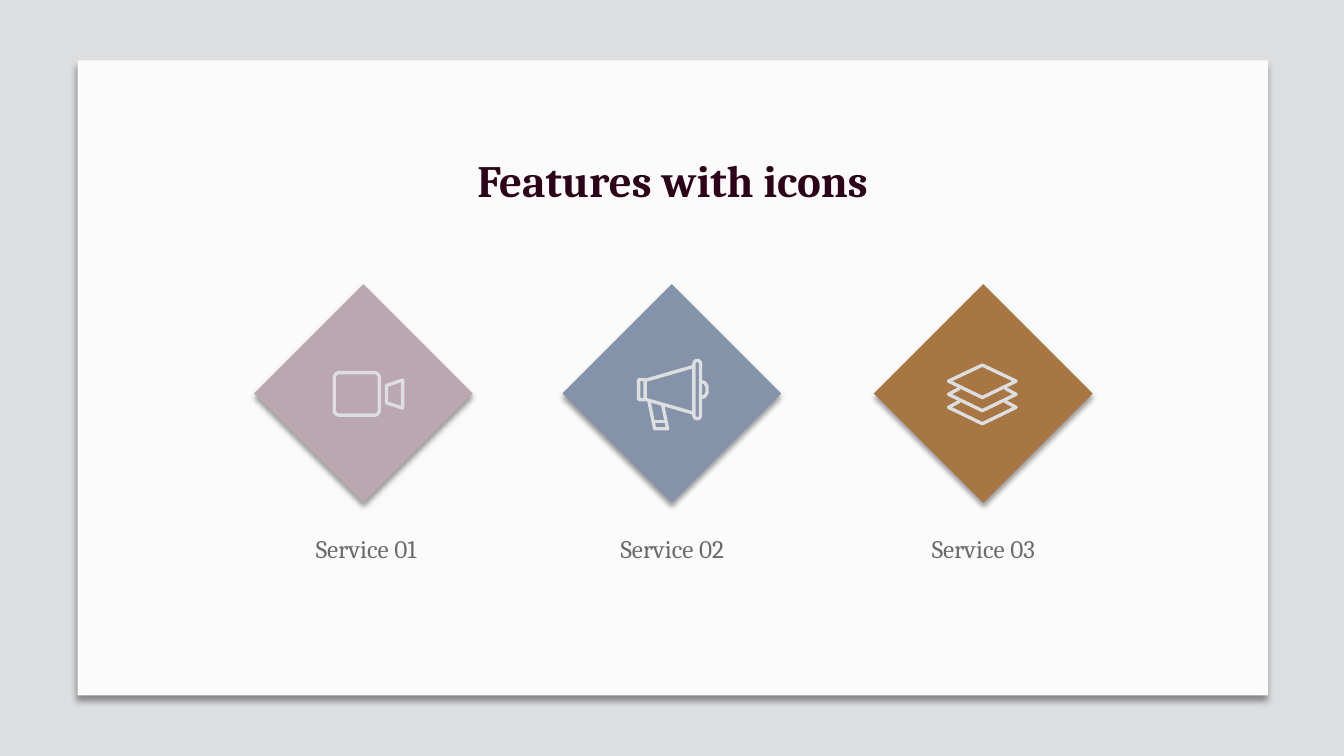
"""Build a slide with three diamond icons, each with a service name."""
import math
import pptx
import pptx.util
import pptx.dml.color
import pptx.enum.shapes
import pptx.enum.text
import pptx.oxml
import pptx.oxml.ns

Pt = pptx.util.Pt
KIND = pptx.enum.shapes.MSO_SHAPE
TEXT = pptx.enum.text

THEME = {
    "font": "Cambria", "back": "DDDEE0", "panel": "FBFBFB",
    "head": "2D0319", "label": "6A6A6A", "icon": "DDDEE0",
    "head_size": 32, "label_size": 18, "stroke": 2.4,
}
TITLE = "Features with icons"


def bend(left, top, right, bottom, rad):
    """Return the points of a box with round corners."""
    spots = [(right - rad, bottom - rad, 0), (left + rad, bottom - rad, 90),
             (left + rad, top + rad, 180), (right - rad, top + rad, 270)]
    return [(x + rad * math.cos(math.radians(turn + step)),
             y + rad * math.sin(math.radians(turn + step)))
            for x, y, turn in spots for step in range(0, 91, 15)]


def sheet(drop):
    """Return the visible edge of a lower layer."""
    edge = [(9.4, 18.2), (1.4, 22.5), (25.6, 34.2), (49.7, 22.5), (41.8, 18.2)]
    return [(x, y + drop) for x, y in edge]


CAMERA = [
    (bend(1.2, 1.2, 33.4, 31.6, 3.6), True),
    ([(38.5, 10.4), (50, 6.5), (50, 26.6), (38.5, 22.7)], True),
]
HORN = [
    (bend(40.7, 1.2, 45.4, 42.8, 2.3), True),
    (bend(1.2, 14.8, 5.8, 29.2, 1), True),
    ([(5.8, 15.5), (40.7, 5.4)], False),
    ([(5.8, 28.9), (40.7, 38.9)], False),
    ([(45.4, 16.2), (48.3, 17), (50, 19.5), (50, 24.4), (48.3, 27),
      (45.4, 27.7)], False),
    ([(8.6, 30.2), (12.6, 50), (21.9, 50), (18.4, 33.1)], False),
    ([(11.9, 45), (20.6, 45)], False),
]
LAYERS = [
    ([(1.4, 13.1), (25.6, 1.6), (49.7, 13.1), (25.6, 24.8)], True),
    (sheet(0), False),
    (sheet(9.3), False),
]
ITEMS = [
    ("Service 01", "BAA7B0", 259.6, 261.6, (237.6, 265), CAMERA),
    ("Service 02", "8593AA", 479.9, 480.2, (455, 256.3), HORN),
    ("Service 03", "A77643", 702.4, 702.4, (676.1, 259.2), LAYERS),
]
SIDE, TOP = 156.2, 203
WIDE, HIGH, LABEL_Y = 97.2, 29, 377.2


def tint(name):
    """Return a colour from its hex code."""
    return pptx.dml.color.RGBColor.from_string(name)


def write(shape, text, size, color, bold=False, space=None, wrap=False):
    """Put centred text in a shape."""
    frame = shape.text_frame
    frame.word_wrap = wrap
    frame.auto_size = TEXT.MSO_AUTO_SIZE.NONE
    frame.vertical_anchor = TEXT.MSO_ANCHOR.TOP
    frame.text = text
    line = frame.paragraphs[0]
    line.alignment = TEXT.PP_ALIGN.CENTER
    if space:
        line.line_spacing = Pt(space)
    font = line.runs[0].font
    font.name, font.size, font.bold = THEME["font"], Pt(size), bold
    font.color.rgb = tint(color)


def block(slide, kind, box, color, drop):
    """Add a filled shape with a soft shadow below it."""
    shape = slide.shapes.add_shape(kind, *map(Pt, box))
    shape.fill.solid()
    shape.fill.fore_color.rgb = tint(color)
    shape.line.fill.background()
    shape.shadow.inherit = False
    glow = pptx.oxml.parse_xml(
        f'<a:outerShdw {pptx.oxml.ns.nsdecls("a")} blurRad="{Pt(4)}" '
        f'dist="{Pt(drop)}" dir="5400000" algn="t" rotWithShape="0">'
        '<a:srgbClr val="000000"><a:alpha val="40000"/></a:srgbClr>'
        '</a:outerShdw>')
    shape._element.spPr.find(pptx.oxml.ns.qn("a:effectLst")).append(glow)


def draw(slide, spot, strokes):
    """Add one icon made of outlines."""
    pen = None
    for points, closed in strokes:
        path = [(Pt(spot[0] + x), Pt(spot[1] + y)) for x, y in points]
        if pen is None:
            pen = slide.shapes.build_freeform(*path[0], scale=1.0)
        else:
            pen.move_to(*path[0])
        pen.add_line_segments(path[1:], close=closed)
    icon = pen.convert_to_shape()
    icon.fill.background()
    icon.line.color.rgb = tint(THEME["icon"])
    icon.line.width = Pt(THEME["stroke"])
    icon.line._get_or_add_ln().append(pptx.oxml.parse_xml(
        f'<a:round {pptx.oxml.ns.nsdecls("a")}/>'))
    icon.shadow.inherit = False


def main():
    """Make the slide and save it."""
    deck = pptx.Presentation()
    deck.slide_width, deck.slide_height = Pt(960), Pt(540)
    slide = deck.slides.add_slide(deck.slide_layouts[5])
    slide.background.fill.solid()
    slide.background.fill.fore_color.rgb = tint(THEME["back"])
    block(slide, KIND.RECTANGLE, (55.4, 43.2, 850.4, 453.6), THEME["panel"], 5)
    for name, color, mid, center, spot, strokes in ITEMS:
        block(slide, KIND.DIAMOND, (mid - SIDE / 2, TOP, SIDE, SIDE), color, 3)
        draw(slide, spot, strokes)
        label = slide.shapes.add_textbox(
            Pt(center - WIDE / 2), Pt(LABEL_Y), Pt(WIDE), Pt(HIGH))
        write(label, name, THEME["label_size"], THEME["label"])
    title = slide.shapes.title
    title.left, title.top = Pt(294.5), Pt(79.9)
    title.width, title.height = Pt(372.2), Pt(64.1)
    write(title, TITLE, THEME["head_size"], THEME["head"],
          bold=True, space=64, wrap=True)
    slide.shapes._spTree.append(title._element)
    deck.save("out.pptx")


if __name__ == "__main__":
    main()
